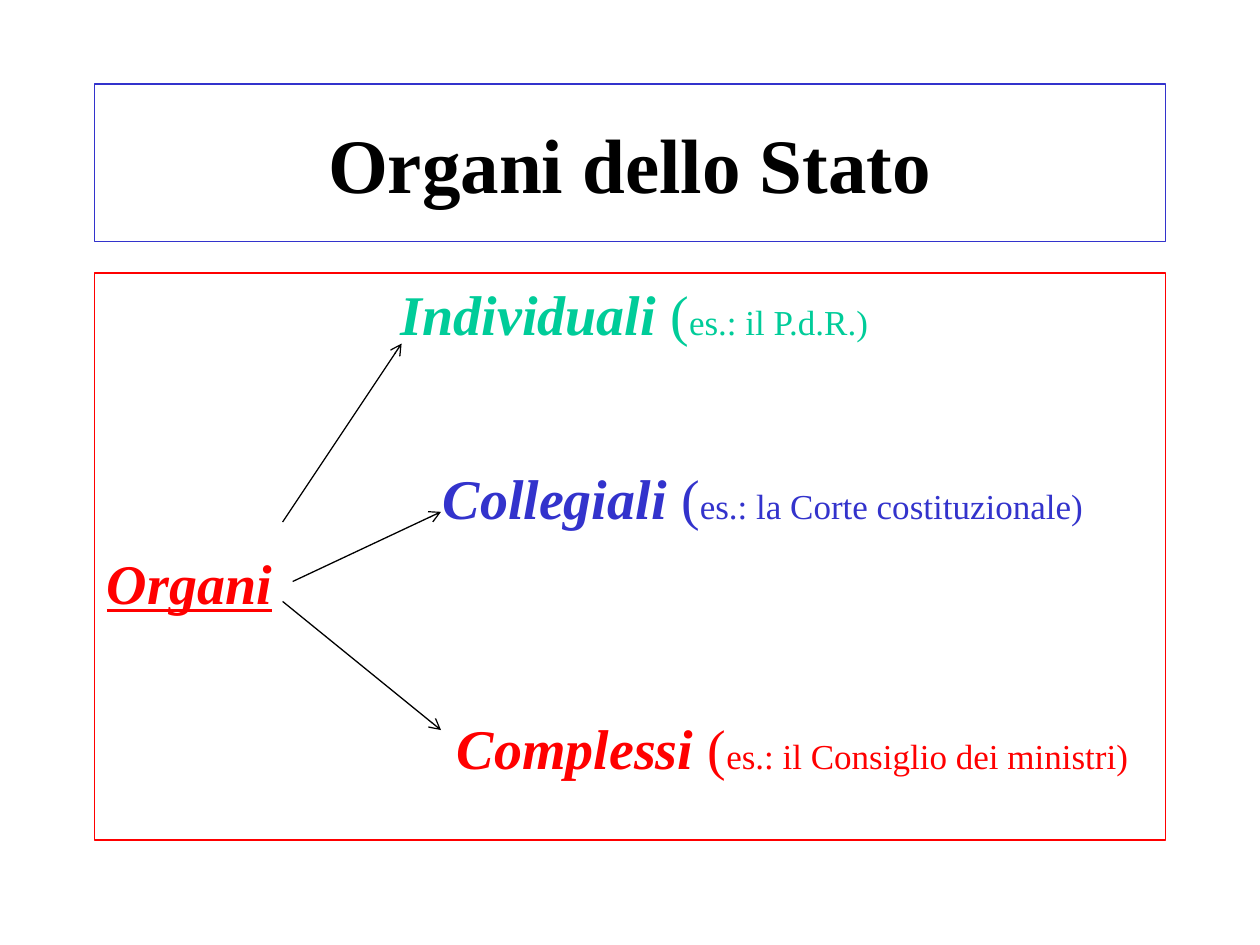
from pptx import Presentation
from pptx.dml.color import RGBColor
from pptx.enum.shapes import MSO_CONNECTOR
from pptx.enum.text import MSO_ANCHOR, PP_ALIGN
from pptx.oxml.ns import qn
from pptx.util import Pt
from lxml.etree import SubElement

BLACK = RGBColor(0x00, 0x00, 0x00)
BLUE = RGBColor(0x33, 0x33, 0xCC)
RED = RGBColor(0xFF, 0x00, 0x00)
GREEN = RGBColor(0x00, 0xCC, 0x99)

FONT = "Times New Roman"
LEFT, WIDTH = 54, 612
TERM = {"size": Pt(32), "bold": True, "italic": True}
PAREN = {"size": Pt(32), "bold": False}
NOTE = {"size": Pt(20), "bold": False}

# term, example, colour, indent, space before
LINES = [
    ("Individuali", "es.: il P.d.R.)", GREEN, 168, 4),
    ("Collegiali", "es.: la Corte costituzionale)", BLUE, 192, 67.2),
    ("Organi", "", RED, 0, 9.6),
    ("Complessi", "es.: il Consiglio dei ministri)", RED, 200, 56),
]
ARROWS = [
    ((161.5, 298.3), (229.5, 196.3)),
    ((167.3, 332.3), (252, 292.5)),
    ((161.5, 343.7), (252, 417.2)),
]


def place(shape, top, height, color):
    box = {"left": LEFT, "top": top, "width": WIDTH, "height": height}
    for name, value in box.items():
        setattr(shape, name, Pt(value))
    shape.line.color.rgb = color
    shape.line.width = Pt(0.75)


def add_run(para, text, color, style):
    run = para.add_run()
    run.text = text
    run.font.name = FONT
    run.font.color.rgb = color
    for name, value in style.items():
        setattr(run.font, name, value)


def add_title(slide):
    title = slide.shapes.title
    place(title, 48, 90, BLUE)
    title.text_frame.vertical_anchor = MSO_ANCHOR.MIDDLE
    para = title.text_frame.paragraphs[0]
    para.alignment = PP_ALIGN.CENTER
    add_run(para, "Organi dello Stato", BLACK, {"size": Pt(44), "bold": True})


def add_line(para, term, note, color, indent, gap):
    para.space_before = Pt(gap)
    para._p.get_or_add_pPr().set("marL", str(Pt(indent)))
    if note:
        add_run(para, term + " ", color, TERM)
        add_run(para, "(", color, PAREN)
        add_run(para, note, color, NOTE)
    else:
        add_run(para, term, color, TERM | {"underline": True})


def add_body(slide):
    body = slide.shapes.add_textbox(0, 0, 0, 0)
    place(body, 156, 324, RED)
    frame = body.text_frame
    frame.word_wrap = True
    for i, line in enumerate(LINES):
        para = frame.add_paragraph() if i else frame.paragraphs[0]
        add_line(para, *line)


def add_arrow(slide, start, end):
    ends = [Pt(v) for v in start + end]
    arrow = slide.shapes.add_connector(MSO_CONNECTOR.STRAIGHT, *ends)
    arrow.line.color.rgb = BLACK
    arrow.line.width = Pt(0.75)
    SubElement(arrow.line._get_or_add_ln(), qn("a:tailEnd"), type="arrow")
    SubElement(arrow._element.spPr, qn("a:effectLst"))


def main():
    deck = Presentation()
    deck.slide_width, deck.slide_height = Pt(720), Pt(540)
    slide = deck.slides.add_slide(deck.slide_layouts[5])
    add_title(slide)
    add_body(slide)
    for start, end in ARROWS:
        add_arrow(slide, start, end)
    deck.save("out.pptx")


if __name__ == "__main__":
    main()
